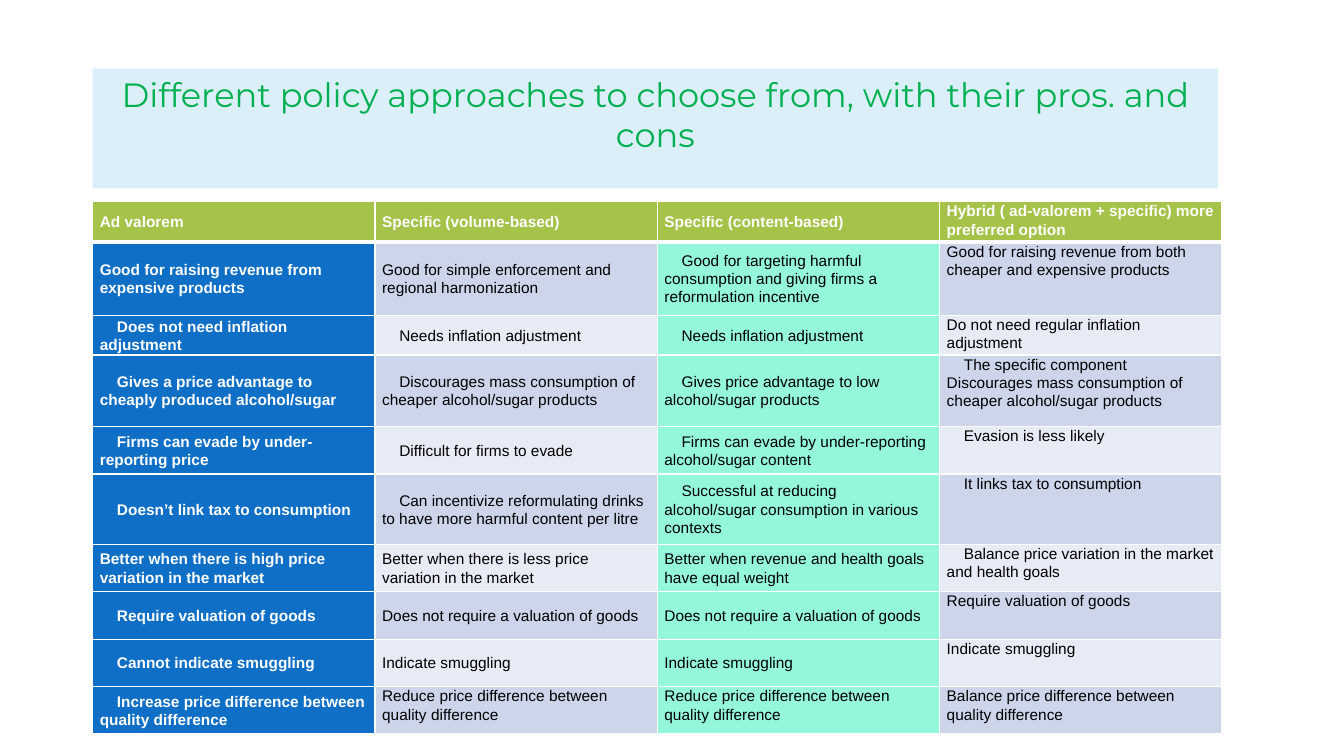
from lxml.etree import SubElement
from pptx import Presentation
from pptx.dml.color import RGBColor
from pptx.enum.text import MSO_ANCHOR, PP_ALIGN
from pptx.oxml.ns import qn
from pptx.util import Pt

PX = 9144  # 100 px to the inch
COLORS = {
    "title": "00B050", "title_fill": "DBEFF9", "header": "A5C249",
    "ad_valorem": "0F6FC6", "content": "94F7DC",
    "odd": "CCD5EA", "even": "E7EBF5", "white": "FFFFFF", "black": "000000",
}
COLUMN_WIDTH = 280

# Height, columns with a first-line indent, texts
ROWS = [
    (40, (), ["Ad valorem", "Specific (volume-based)", "Specific (content-based)",
              "Hybrid ( ad-valorem + specific) more preferred option"]),
    (73, (2,), ["Good for raising revenue from expensive products",
                "Good for simple enforcement and regional harmonization",
                "Good for targeting harmful consumption and giving firms a reformulation incentive",
                "Good for raising revenue from both cheaper and expensive products"]),
    (25, (0, 1, 2), ["Does not need inflation adjustment", "Needs inflation adjustment",
                     "Needs inflation adjustment", "Do not need regular inflation adjustment"]),
    (71, (0, 1, 2, 3), ["Gives a price advantage to cheaply produced alcohol/sugar",
                        "Discourages mass consumption of cheaper alcohol/sugar products",
                        "Gives price advantage to low alcohol/sugar products",
                        "The specific component Discourages mass consumption of cheaper alcohol/sugar products"]),
    (47, (0, 1, 2, 3), ["Firms can evade by under-reporting price", "Difficult for firms to evade",
                        "Firms can evade by under-reporting alcohol/sugar content",
                        "Evasion is less likely"]),
    (70, (0, 1, 2, 3), ["Doesn’t link tax to consumption",
                        "Can incentivize reformulating drinks to have more harmful content per litre",
                        "Successful at reducing alcohol/sugar consumption in various contexts",
                        "It links tax to consumption"]),
    (47, (3,), ["Better when there is high price variation in the market",
                "Better when there is less price variation in the market",
                "Better when revenue and health goals have equal weight",
                "Balance price variation in the market and health goals"]),
    (47, (0,), ["Require valuation of goods", "Does not require a valuation of goods",
                "Does not require a valuation of goods", "Require valuation of goods"]),
    (47, (0,), ["Cannot indicate smuggling", "Indicate smuggling",
                "Indicate smuggling", "Indicate smuggling"]),
    (47, (0,), ["Increase price difference between quality difference",
                "Reduce price difference between quality difference",
                "Reduce price difference between quality difference",
                "Balance price difference between quality difference"]),
]
LAST_ROW = len(ROWS) - 1


def write(para, text, color, **formats):
    span = para.add_run()
    span.text = text
    for name, value in formats.items():
        setattr(span.font, name, value)
    span.font.color.rgb = RGBColor.from_string(COLORS[color])


def add_borders(cell, bottom_width):
    properties = cell._tc.get_or_add_tcPr()
    for side, width in (("L", 1), ("R", 1), ("T", 1), ("B", bottom_width)):
        line = SubElement(properties, qn(f"a:ln{side}"), w=str(Pt(width)))
        fill = SubElement(line, qn("a:solidFill"))
        SubElement(fill, qn("a:srgbClr"), val=COLORS["white"])


deck = Presentation()
deck.slide_width, deck.slide_height = 1333 * PX, 750 * PX
page = deck.slides.add_slide(deck.slide_layouts[6])

title = page.shapes.add_textbox(92 * PX, 68 * PX, 1116 * PX, 119 * PX)
title.fill.solid()
title.fill.fore_color.rgb = RGBColor.from_string(COLORS["title_fill"])
title.text_frame.word_wrap = True
title_para = title.text_frame.paragraphs[0]
title_para.alignment = PP_ALIGN.CENTER
write(title_para, "Different policy approaches to choose from, with their pros. and cons",
      "title", name="Montserrat", size=Pt(24))

table_height = sum(height for height, _, _ in ROWS)
table = page.shapes.add_table(len(ROWS), 4, 92 * PX, 200 * PX,
                              4 * COLUMN_WIDTH * PX, table_height * PX).table
for column in table.columns:
    column.width = COLUMN_WIDTH * PX

cell_format = {"margin_left": 7 * PX, "margin_right": 7 * PX, "margin_top": 0, "margin_bottom": 0}
for r, (height, indented, texts) in enumerate(ROWS):
    table.rows[r].height = height * PX
    band = "odd" if r % 2 else "even"
    fills = ["header"] * 4 if r == 0 else ["ad_valorem", band, "content", band]
    for c, (text, fill) in enumerate(zip(texts, fills)):
        cell = table.cell(r, c)
        for name, value in cell_format.items():
            setattr(cell, name, value)
        closing = r == LAST_ROW and c > 0
        at_top = c == 3 or closing
        cell.vertical_anchor = MSO_ANCHOR.TOP if at_top else MSO_ANCHOR.MIDDLE
        add_borders(cell, 3 if r == 0 else 1)
        cell.fill.solid()
        cell.fill.fore_color.rgb = RGBColor.from_string(COLORS[fill])

        para = cell.text_frame.paragraphs[0]
        para.line_spacing = 1.07
        if closing:
            para.space_after = Pt(8)
        if c in indented:
            paragraph_properties = para._p.get_or_add_pPr()
            paragraph_properties.set("marL", "0")
            paragraph_properties.set("indent", str(17 * PX))
        heading = r == 0 or c == 0
        write(para, text, "white" if heading else "black",
              name="Arial", size=Pt(11), bold=heading)

deck.save("out.pptx")
